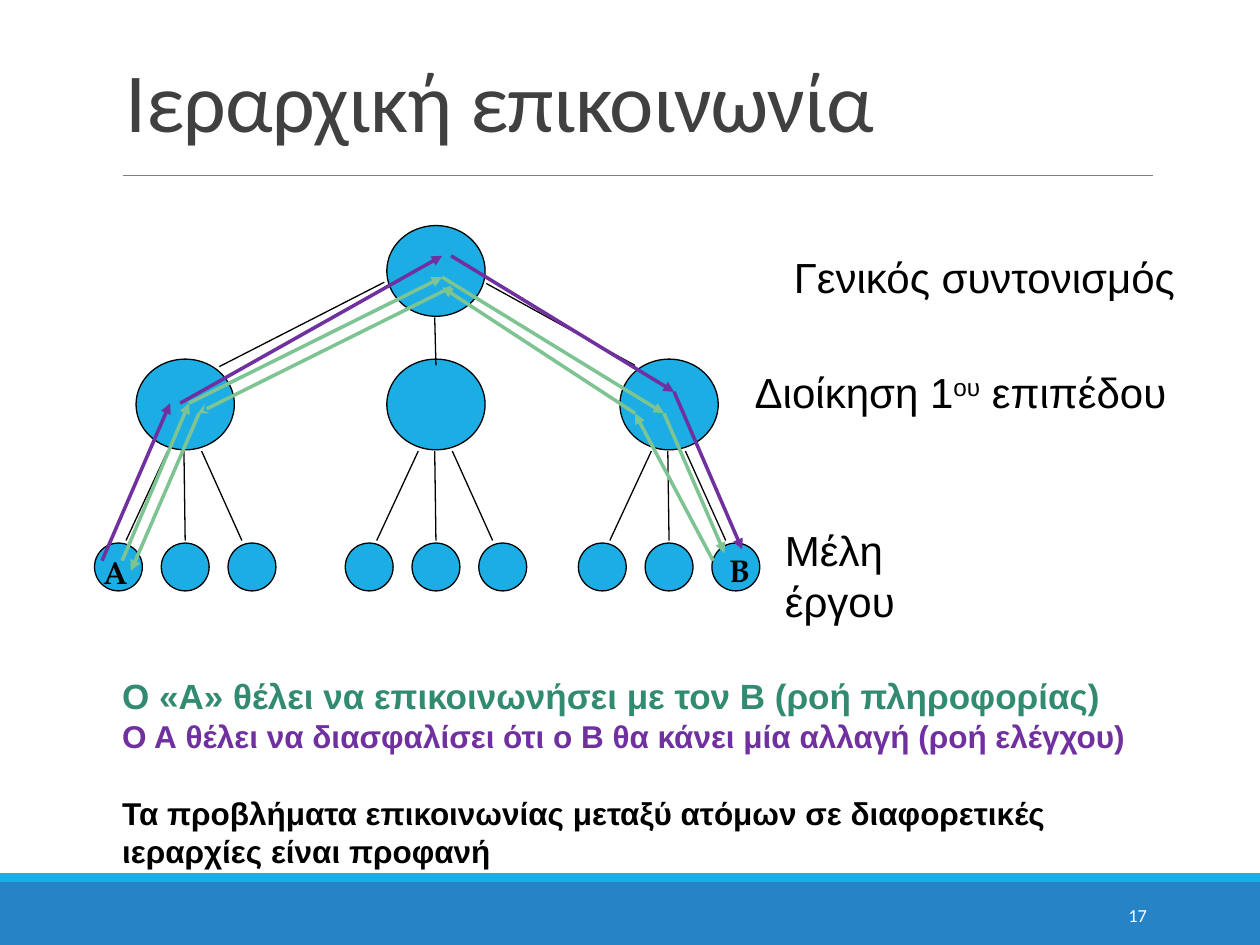
"""Build a slide on communication through a project hierarchy."""
from dataclasses import dataclass
from itertools import pairwise

from lxml.etree import SubElement
from pptx import Presentation
from pptx.dml.color import RGBColor
from pptx.enum.shapes import MSO_CONNECTOR, MSO_SHAPE
from pptx.enum.text import MSO_ANCHOR, PP_ALIGN
from pptx.oxml.ns import qn
from pptx.util import Inches, Pt


@dataclass(frozen=True)
class Theme:
    sky: str = "1CADE4"
    blue: str = "2683C6"
    black: str = "000000"
    white: str = "FFFFFF"
    dark: str = "404040"
    gray: str = "808080"
    mint: str = "7EC492"
    green: str = "328B71"
    purple: str = "7030A0"
    title: float = 48
    label: float = 24
    lead: float = 20
    body: float = 18
    small: float = 10.5
    sans: str = "Arial"
    head: str = "Calibri"
    serif: str = "TeX Gyre Pagella"


THEME = Theme()
ROOT = 3.46
TEAMS = (1.47, ROOT, 5.31)
STEP = 0.53
SPOKES = ((-0.14, -0.47), (-0.01, 0), (0.13, 0.45))


def shape(slide, kind, box, line=None, fill=THEME.sky):
    item = slide.shapes.add_shape(kind, *map(Inches, box))
    item.shadow.inherit = False
    item.fill.solid()
    item.fill.fore_color.rgb = RGBColor.from_string(fill)
    if line:
        item.line.color.rgb = RGBColor.from_string(line)
        item.line.width = Pt(0.75)
    else:
        item.line.fill.background()


def node(slide, x, y, width, height):
    box = (x - width / 2, y - height / 2, width, height)
    shape(slide, MSO_SHAPE.OVAL, box, THEME.black)


def link(slide, start, end, color=THEME.black, width=0.75, tip=None):
    line = slide.shapes.add_connector(
        MSO_CONNECTOR.STRAIGHT, *map(Inches, (*start, *end)))
    line.line.color.rgb = RGBColor.from_string(color)
    line.line.width = Pt(width)
    if tip:
        SubElement(line.get_or_add_ln(), qn("a:tailEnd"), type=tip)
    SubElement(line.element.spPr, qn("a:effectLst"))


def flow(slide, color, *points, tip="triangle"):
    for start, end in pairwise(points):
        link(slide, start, end, color, 2, tip)


def frame(slide, box, wrap=False, inset=0, anchor=MSO_ANCHOR.TOP):
    area = slide.shapes.add_textbox(*map(Inches, box)).text_frame
    area.word_wrap = wrap
    area.vertical_anchor = anchor
    area.margin_left = area.margin_right = Inches(inset)
    area.margin_top = area.margin_bottom = Inches(inset / 2)
    return area


def write(para, text, size=THEME.label, font=THEME.sans, color=THEME.black,
          bold=False, lead=None, raised=0, track=0, align=None, before=0):
    run = para.add_run()
    run.text = text
    run.font.size = Pt(size)
    run.font.name = font
    run.font.bold = bold
    run.font.color.rgb = RGBColor.from_string(color)
    props = run.font._element
    if raised:
        props.set("baseline", str(raised * 1000))
    if track:
        props.set("spc", str(int(track * 100)))
    if lead:
        para.line_spacing = lead
    if before:
        para.space_before = Pt(before)
    if align is not None:
        para.alignment = align


def base(slide):
    shape(slide, MSO_SHAPE.RECTANGLE, (0, 7, 10, 0.5), fill=THEME.blue)
    shape(slide, MSO_SHAPE.RECTANGLE, (0, 6.93, 10, 0.07))
    link(slide, (0.98, 1.39), (9.15, 1.39), THEME.gray, 0.5)
    area = frame(slide, (0.9, 0.31, 8.25, 0.93), True, 0.1, MSO_ANCHOR.BOTTOM)
    write(area.paragraphs[0], "Ιεραρχική επικοινωνία", size=THEME.title,
          font=THEME.head, color=THEME.dark, lead=0.85, track=-0.5)
    area = frame(slide, (8.12, 7.06, 1.08, 0.4), True, 0.1, MSO_ANCHOR.MIDDLE)
    write(area.paragraphs[0], "17", size=THEME.small, font=THEME.head,
          color=THEME.white, align=PP_ALIGN.RIGHT)


def tree(slide):
    node(slide, ROOT, 2.15, 0.78, 0.72)
    for x in TEAMS:
        node(slide, x, 3.21, 0.78, 0.72)
        for place in (-1, 0, 1):
            node(slide, x + place * STEP, 4.5, 0.38, 0.38)
        for top, foot in SPOKES:
            link(slide, (x + top, 3.58), (x + foot, 4.29))
    link(slide, (3.05, 2.24), (1.74, 2.91))
    link(slide, (3.45, 2.52), (ROOT, 2.9))
    link(slide, (3.86, 2.25), (5.04, 2.9))


def labels(slide):
    rows = (((6.3, 1.99, 3.04, 0.4), (("Γενικός συντονισμός", 0),)),
            ((5.99, 2.91, 3.3, 0.4),
             (("Διοίκηση 1", 0), ("ου", 30), (" επιπέδου", 0))),
            ((6.23, 4.16, 1.74, 0.4), (("Μέλη έργου", 0),)))
    for box, parts in rows:
        para = frame(slide, box).paragraphs[0]
        for text, raised in parts:
            write(para, text, lead=Pt(29), raised=raised)


def flows(slide):
    flow(slide, THEME.mint, (0.97, 4.45), (1.5, 3.2), (3.51, 2.2),
         (5.27, 3.28), (5.75, 4.39))
    for x, y, text in ((0.82, 4.38, "A"), (5.79, 4.37, "B")):
        write(frame(slide, (x, y, 0.18, 0.31)).paragraphs[0], text,
              size=THEME.body, font=THEME.serif, bold=True, lead=Pt(22))
    flow(slide, THEME.mint, (5.66, 4.45), (5.04, 3.28), (3.51, 2.28))
    flow(slide, THEME.mint, (1.58, 3.28), (1.04, 4.53))
    flow(slide, THEME.purple, (3.58, 2.03), (5.35, 3.11), (5.89, 4.36))
    flow(slide, THEME.purple, (0.81, 4.45), (1.35, 3.2))
    flow(slide, THEME.purple, (1.43, 3.2), (3.51, 2.03))
    flow(slide, THEME.mint, (3.58, 2.28), (1.57, 3.28), tip="stealth")


def notes(slide):
    area = frame(slide, (0.97, 5.38, 8.36, 1.53), True)
    rows = (("Ο «Α» θέλει να επικοινωνήσει με τον Β (ροή πληροφορίας)",
             THEME.lead, THEME.green, 0),
            ("Ο Α θέλει να διασφαλίσει ότι ο Β θα κάνει μία αλλαγή "
             "(ροή ελέγχου)", THEME.body, THEME.purple, 0),
            ("Τα προβλήματα επικοινωνίας μεταξύ ατόμων σε διαφορετικές "
             "ιεραρχίες είναι προφανή", THEME.body, THEME.black, 22))
    for place, (text, size, color, before) in enumerate(rows):
        para = area.add_paragraph() if place else area.paragraphs[0]
        write(para, text, size=size, color=color, bold=True, lead=Pt(22),
              before=before)


def main():
    deck = Presentation()
    deck.slide_width, deck.slide_height = Inches(10), Inches(7.5)
    slide = deck.slides.add_slide(deck.slide_layouts[6])
    for draw in (base, tree, labels, flows, notes):
        draw(slide)
    deck.save("out.pptx")


if __name__ == "__main__":
    main()
